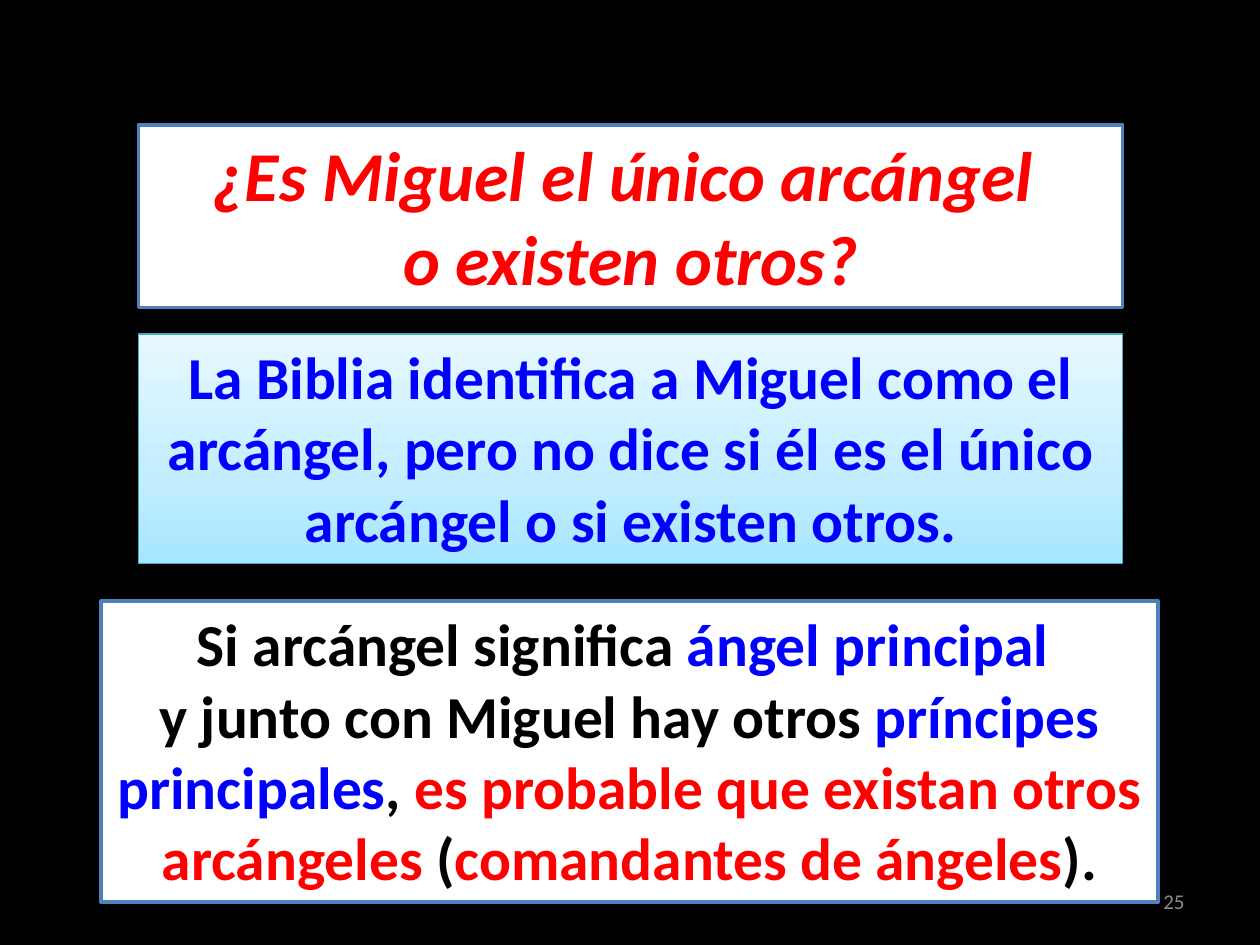
import pptx
import pptx.util
import pptx.oxml
from pptx.dml.color import RGBColor
from pptx.enum.shapes import MSO_SHAPE
from pptx.enum.text import MSO_ANCHOR, MSO_AUTO_SIZE, PP_ALIGN
from pptx.oxml.ns import nsdecls
from pptx.util import Inches, Pt

BLACK = RGBColor(0x00, 0x00, 0x00)
WHITE = RGBColor(0xFF, 0xFF, 0xFF)
RED = RGBColor(0xFF, 0x00, 0x00)
BLUE = RGBColor(0x00, 0x00, 0xFF)
GREY = RGBColor(0x8C, 0x8C, 0x8C)
STEEL = RGBColor(0x4F, 0x81, 0xBD)
TEAL = RGBColor(0x46, 0xAA, 0xC5)
SKY_STOPS = [(0, "A7E6FF"), (35, "C1EDFF"), (100, "E7F8FF")]
FONT = "Calibri"

# Each paragraph is a list of (text, colour) runs.
QUESTION = [
    [("¿Es Miguel el único arcángel ", RED)],
    [("o existen otros?", RED)],
]
ANSWER = [
    [("La Biblia identifica a Miguel como el arcángel, pero no dice "
      "si él es el único arcángel o si existen otros.", BLUE)],
]
CONCLUSION = [
    [("Si arcángel significa ", BLACK), ("ángel principal ", BLUE)],
    [("y junto con Miguel hay otros ", BLACK),
     ("príncipes principales", BLUE), (", ", BLACK),
     ("es probable que existan otros arcángeles ", RED), ("(", BLACK),
     ("comandantes de ángeles", RED), (").", BLACK)],
]
PAGE_NUMBER = "25"


def place(shape, left, top, width, height):
    shape.left, shape.top = Inches(left), Inches(top)
    shape.width, shape.height = Inches(width), Inches(height)


def outline_text(run, color):
    run.font._element.insert(0, pptx.oxml.parse_xml(
        f'<a:ln {nsdecls("a")} w="{Pt(0.75)}"><a:solidFill>'
        f'<a:srgbClr val="{color}"/></a:solidFill></a:ln>'))


def write(shape, paragraphs, size, italic=False):
    frame = shape.text_frame
    frame.word_wrap = True
    frame.auto_size = MSO_AUTO_SIZE.NONE
    frame.vertical_anchor = MSO_ANCHOR.TOP
    for index, runs in enumerate(paragraphs):
        paragraph = frame.add_paragraph() if index else frame.paragraphs[0]
        paragraph.alignment = PP_ALIGN.CENTER
        font = paragraph.font
        font.name, font.size = FONT, Pt(size)
        font.bold, font.italic = True, italic
        for text, color in runs:
            run = paragraph.add_run()
            run.text = text
            run.font.color.rgb = color
            outline_text(run, color)


def frame_box(shape, line_color, line_width):
    shape.shadow.inherit = False
    shape.fill.solid()
    shape.fill.fore_color.rgb = WHITE
    shape.line.color.rgb = line_color
    shape.line.width = Pt(line_width)


def fill_sky(shape):
    """Three-stop gradient, palest at the top."""
    shape.fill.gradient()
    shape.fill.gradient_angle = 90
    stops = shape._element.spPr.find(".//" + pptx.oxml.ns.qn("a:gsLst"))
    for stop in list(stops):
        stops.remove(stop)
    for position, color in SKY_STOPS:
        stops.append(pptx.oxml.parse_xml(
            f'<a:gs {nsdecls("a")} pos="{position * 1000}">'
            f'<a:srgbClr val="{color}"/></a:gs>'))


def drop_shadow(shape):
    effects = shape._element.spPr.find(pptx.oxml.ns.qn("a:effectLst"))
    effects.append(pptx.oxml.parse_xml(
        f'<a:outerShdw {nsdecls("a")} blurRad="{Pt(3.1)}" dist="{Pt(1.6)}" '
        'dir="5400000" rotWithShape="0"><a:srgbClr val="000000">'
        '<a:alpha val="38000"/></a:srgbClr></a:outerShdw>'))


def main():
    deck = pptx.Presentation()
    deck.slide_width, deck.slide_height = Inches(10), Inches(7.5)
    slide = deck.slides.add_slide(deck.slide_layouts[5])
    slide.background.fill.solid()
    slide.background.fill.fore_color.rgb = BLACK

    question = slide.shapes.title
    place(question, 1.1, 0.99, 7.81, 1.45)
    frame_box(question, STEEL, 2)
    write(question, QUESTION, 40, italic=True)

    answer, conclusion = (
        slide.shapes.add_shape(MSO_SHAPE.RECTANGLE, 0, 0, 0, 0)
        for _ in range(2))
    place(answer, 1.1, 2.65, 7.81, 1.82)
    frame_box(answer, TEAL, 0.75)
    fill_sky(answer)
    drop_shadow(answer)
    write(answer, ANSWER, 34)

    place(conclusion, 0.8, 4.77, 8.39, 2.39)
    frame_box(conclusion, STEEL, 2)
    write(conclusion, CONCLUSION, 34)

    number = slide.shapes.add_textbox(0, 0, 0, 0)
    place(number, 7.17, 6.95, 2.33, 0.4)
    number.text_frame.word_wrap = True
    number.text_frame.vertical_anchor = MSO_ANCHOR.MIDDLE
    paragraph = number.text_frame.paragraphs[0]
    paragraph.text = PAGE_NUMBER
    paragraph.alignment = PP_ALIGN.RIGHT
    paragraph.font.name, paragraph.font.size = FONT, Pt(12)
    paragraph.font.color.rgb = GREY

    deck.save("out.pptx")


if __name__ == "__main__":
    main()
